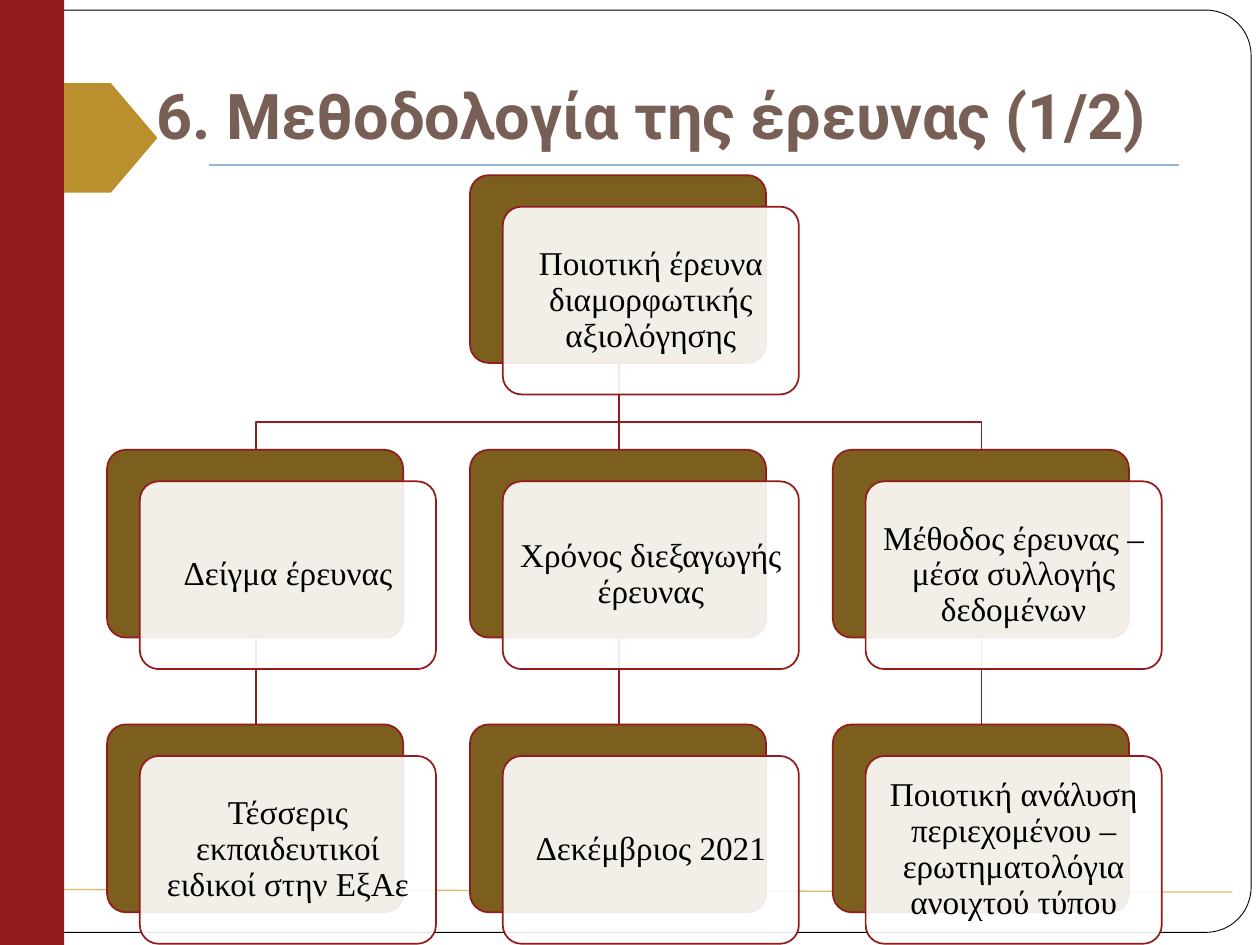
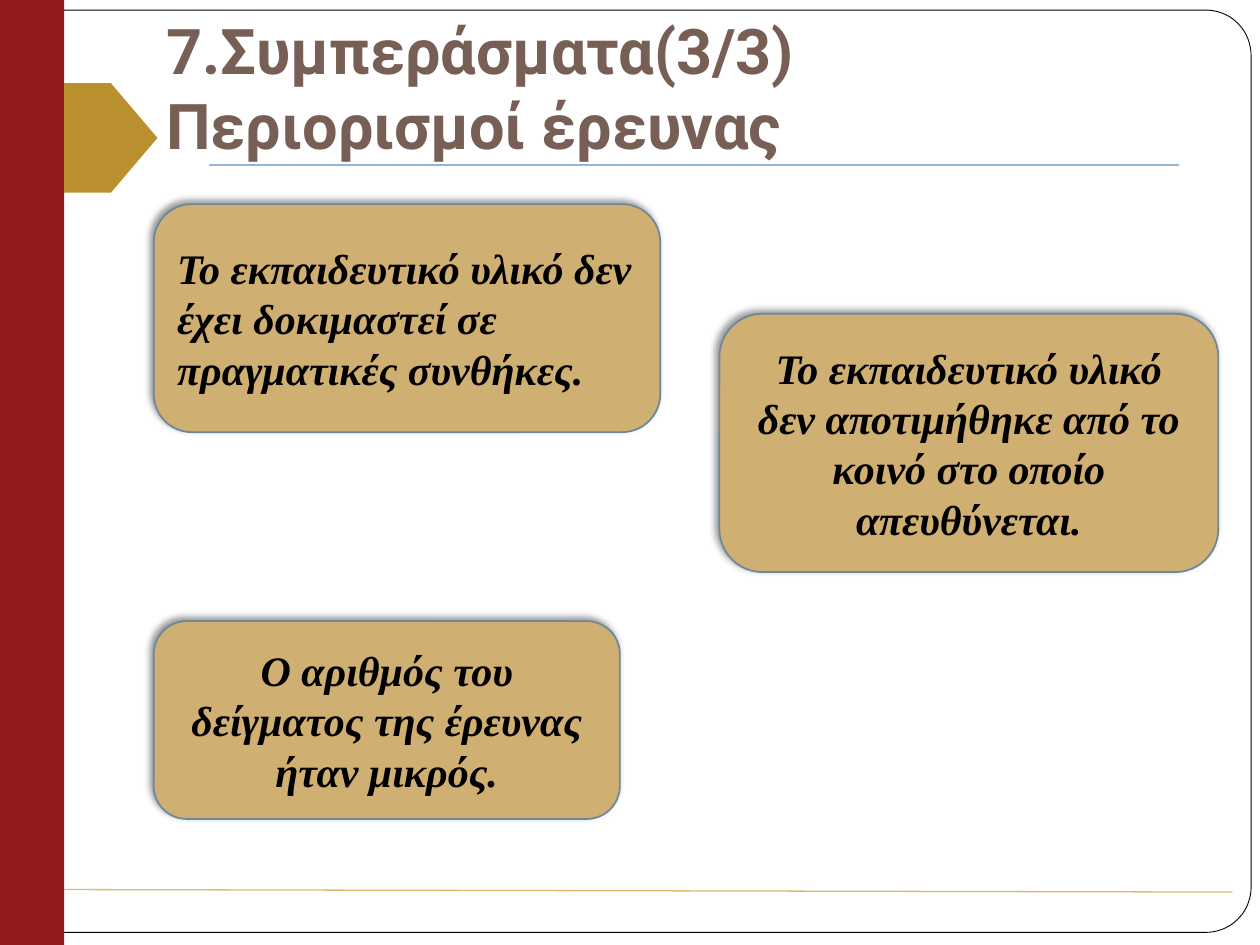
from typing import Any, NamedTuple, Optional

from lxml import etree
from pptx import Presentation
from pptx import util as u
from pptx.dml.color import RGBColor
from pptx.enum import shapes, text
from pptx.oxml import ns

PX = 9144
WIDE, HIGH = 1000, 750
HUES = {
    "white": "FFFFFF", "black": "000000", "red": "931B1B", "gold": "BA8F2D",
    "sand": "DCBA6C", "sky": "94B6D2", "title": "775F55", "brown": "7C5F1E",
    "tan": "D0AF72", "steel": "6D879B",
}
FORM = shapes.MSO_SHAPE
ALIGN = text.PP_ALIGN
HEAD = {"name": "Roboto", "size": u.Pt(36), "bold": True}
NODE = {"name": "Times New Roman", "size": u.Pt(19)}
NOTE = {"name": "Times New Roman", "size": u.Pt(24), "bold": True, "italic": True}


class Box(NamedTuple):
    x: int
    y: int
    w: int
    h: int


class Look(NamedTuple):
    form: Any
    fill: str
    edge: Optional[str] = None
    width: float = 1
    round: Optional[float] = None


class Node(NamedTuple):
    col: int
    row: int
    words: str


class Card(NamedTuple):
    box: Box
    words: str
    align: Any = ALIGN.CENTER


class Rule(NamedTuple):
    start: tuple
    end: tuple
    hue: str
    width: float = 0.75


FRAME = [
    (Box(7, 8, 986, 732), Look(FORM.ROUNDED_RECTANGLE, "white", "black", 0.5, 0.049)),
    (Box(0, 0, 51, HIGH), Look(FORM.RECTANGLE, "red")),
    (Box(51, 66, 74, 87), Look(FORM.PENTAGON, "gold")),
]
RULES = [
    Rule((166, 131), (936, 131), "sky"),
    Rule((51, 706), (978, 708), "sand"),
]
BACK = Look(FORM.ROUNDED_RECTANGLE, "brown", "red", 1, 0.1)
FRONT = BACK._replace(fill="white")
PLATE = Look(FORM.ROUNDED_RECTANGLE, "tan", "steel")

LEFT, TOP = 85, 139
STEP_X, STEP_Y = 288, 218
NODE_W, NODE_H = 235, 149
SHIFT_X, SHIFT_Y = 26, 25
BEND = 335
NODES = [
    Node(1, 0, "Ποιοτική έρευνα διαμορφωτικής αξιολόγησης"),
    Node(0, 1, "Δείγμα έρευνας"),
    Node(0, 2, "Τέσσερις εκπαιδευτικοί ειδικοί στην ΕξΑε"),
    Node(1, 1, "Χρόνος διεξαγωγής έρευνας"),
    Node(1, 2, "Δεκέμβριος 2021"),
    Node(2, 1, "Μέθοδος έρευνας – μέσα συλλογής δεδομένων"),
    Node(2, 2, "Ποιοτική ανάλυση περιεχομένου – ερωτηματολόγια ανοιχτού τύπου"),
]
CARDS = [
    Card(Box(122, 493, 370, 157), "Ο αριθμός του δείγματος της έρευνας ήταν μικρός."),
    Card(Box(122, 162, 402, 181),
         "Το εκπαιδευτικό υλικό δεν έχει δοκιμαστεί σε πραγματικές συνθήκες.", ALIGN.LEFT),
    Card(Box(571, 249, 396, 205),
         "Το εκπαιδευτικό υλικό δεν αποτιμήθηκε από το κοινό στο οποίο απευθύνεται."),
]


def tint(name: str) -> RGBColor:
    return RGBColor.from_string(HUES[name])


def apply(thing: Any, vals: dict) -> None:
    for key, val in vals.items():
        setattr(thing, key, val)


def pen(line: Any, hue: str, width: float) -> None:
    line.color.rgb = tint(hue)
    line.width = u.Pt(width)


def draw(slide: Any, box: Box, look: Look) -> Any:
    shape = slide.shapes.add_shape(look.form, *(PX * n for n in box))
    shape.shadow.inherit = False
    shape.fill.solid()
    shape.fill.fore_color.rgb = tint(look.fill)
    if look.edge:
        pen(shape.line, look.edge, look.width)
    else:
        shape.line.fill.background()
    if look.round is not None:
        shape.adjustments[0] = look.round
    return shape


def rule(slide: Any, item: Rule) -> None:
    ends = (PX * n for n in item.start + item.end)
    line = slide.shapes.add_connector(shapes.MSO_CONNECTOR.STRAIGHT, *ends)
    pen(line.line, item.hue, item.width)
    etree.SubElement(line._element.spPr, ns.qn("a:effectLst"))


def elbow(slide: Any, spots: list) -> None:
    path = slide.shapes.build_freeform(*spots[0], scale=PX)
    path.add_line_segments(spots[1:], close=False)
    shape = path.convert_to_shape()
    shape.fill.background()
    shape.shadow.inherit = False
    pen(shape.line, "red", 1)


def write(shape: Any, words: str, font: dict, hue: str, align: Any, frame: dict) -> None:
    body = shape.text_frame
    body.text = words
    apply(body, {"word_wrap": True, "auto_size": text.MSO_AUTO_SIZE.NONE, **frame})
    para = body.paragraphs[0]
    para.alignment = align
    for run in para.runs:
        apply(run.font, font)
        run.font.color.rgb = tint(hue)


def fade(shape: Any, share: int) -> None:
    color = shape._element.spPr.find(f"{ns.qn('a:solidFill')}/{ns.qn('a:srgbClr')}")
    etree.SubElement(color, ns.qn("a:alpha"), val=str(share * 1000))


def shade(shape: Any) -> None:
    group = shape._element.spPr.find(ns.qn("a:effectLst"))
    cast = etree.SubElement(group, ns.qn("a:outerShdw"), blurRad=str(u.Pt(4)),
                            dist=str(u.Pt(3)), dir=str(225 * 60000), algn="br",
                            rotWithShape="0")
    color = etree.SubElement(cast, ns.qn("a:srgbClr"), val=HUES["black"])
    etree.SubElement(color, ns.qn("a:alpha"), val="40000")


def start(deck: Any, words: str, box: Box) -> Any:
    slide = deck.slides.add_slide(deck.slide_layouts[5])
    for place, look in FRAME:
        draw(slide, place, look)
    for item in RULES:
        rule(slide, item)
    title = slide.shapes.title
    apply(title, dict(zip(("left", "top", "width", "height"), (PX * n for n in box))))
    write(title, words, HEAD, "title", ALIGN.LEFT, {
        "vertical_anchor": text.MSO_ANCHOR.BOTTOM, "margin_left": 10 * PX,
        "margin_right": 10 * PX, "margin_top": 5 * PX, "margin_bottom": 10 * PX,
    })
    slide.shapes._spTree.append(title._element)
    return slide


def links(slide: Any) -> None:
    mids = [LEFT + col * STEP_X + NODE_W // 2 + 1 for col in range(3)]
    ends = [TOP + row * STEP_Y + NODE_H for row in range(2)]
    tops = [TOP + row * STEP_Y for row in range(1, 3)]
    root = mids[1]
    for mid in mids:
        rule(slide, Rule((mid, ends[1]), (mid, tops[1]), "red", 1))
        if mid == root:
            rule(slide, Rule((mid, ends[0]), (mid, tops[0]), "red", 1))
        else:
            elbow(slide, [(root, ends[0]), (root, BEND), (mid, BEND), (mid, tops[0])])


def chart(slide: Any) -> None:
    links(slide)
    pads = {f"margin_{side}": 4 * PX for side in ("left", "right", "top", "bottom")}
    for node in NODES:
        box = Box(LEFT + node.col * STEP_X, TOP + node.row * STEP_Y, NODE_W, NODE_H)
        draw(slide, box, BACK)
        shape = draw(slide, box._replace(x=box.x + SHIFT_X, y=box.y + SHIFT_Y), FRONT)
        fade(shape, 90)
        write(shape, node.words, NODE, "black", ALIGN.CENTER,
              {"vertical_anchor": text.MSO_ANCHOR.MIDDLE, **pads})
        shape.text_frame.paragraphs[0].line_spacing = 0.9


def cards(slide: Any) -> None:
    for card in CARDS:
        shape = draw(slide, card.box, PLATE)
        shade(shape)
        write(shape, card.words, NOTE, "black", card.align,
              {"vertical_anchor": text.MSO_ANCHOR.MIDDLE})


def main() -> None:
    deck = Presentation()
    apply(deck, {"slide_width": WIDE * PX, "slide_height": HIGH * PX})
    chart(start(deck, "6. Μεθοδολογία της έρευνας (1/2)", Box(114, 68, 850, 63)))
    cards(start(deck, "7.Συμπεράσματα(3/3)\vΠεριορισμοί έρευνας", Box(122, 76, 850, 63)))
    deck.save("out.pptx")


if __name__ == "__main__":
    main()
